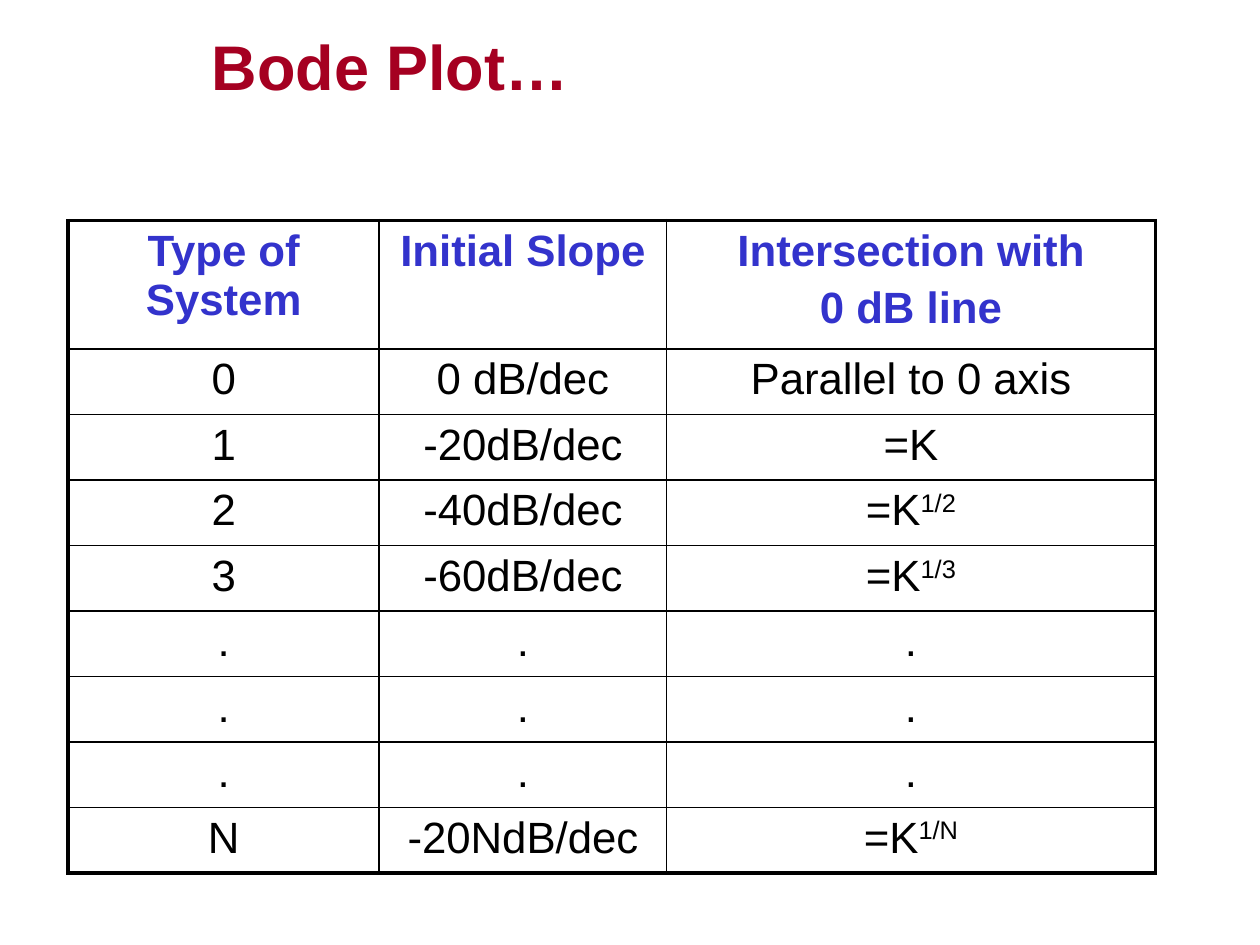
from lxml.etree import SubElement
from pptx import Presentation
from pptx.dml.color import RGBColor
from pptx.enum.text import MSO_ANCHOR as Anchor, PP_ALIGN as Align
from pptx.oxml.ns import qn
from pptx.util import Inches, Pt

FONT = "Arial"
RED, BLUE, BLACK = "A50021", "3333CC", "000000"
THIN, THICK = 1, 2.25

# Each cell is a list of paragraphs; "^" starts a superscript
HEADER = [["Type of System"], ["Initial Slope"], ["Intersection with", "0 dB line"]]
SYSTEMS = [
    ("0", "0 dB/dec", "Parallel to 0 axis"),
    ("1", "-20dB/dec", "=K"),
    ("2", "-40dB/dec", "=K^1/2"),
    ("3", "-60dB/dec", "=K^1/3"),
    *[(".", ".", ".")] * 3,
    ("N", "-20NdB/dec", "=K^1/N"),
]
COLUMN_WIDTHS = [2.47, 2.28, 3.88]
ROW_HEIGHTS = [1.02] + [0.52] * len(SYSTEMS)


def color(value):
    return RGBColor.from_string(value)


class SlideBuilder:
    def __init__(self, deck):
        self.page = deck.slides.add_slide(deck.slide_layouts[5])

    def format_span(self, span, size, ink, bold):
        values = {"name": FONT, "size": Pt(size), "bold": bold}
        for name, value in values.items():
            setattr(span.font, name, value)
        span.font.color.rgb = color(ink)

    def title(self, text, left, top, width, height):
        box = self.page.shapes.title
        place = {"left": left, "top": top, "width": width, "height": height}
        for name, value in place.items():
            setattr(box, name, Inches(value))
        frame = box.text_frame
        frame.vertical_anchor = Anchor.MIDDLE
        para = frame.paragraphs[0]
        para.alignment = Align.LEFT
        span = para.add_run()
        span.text = text
        self.format_span(span, 36, RED, True)

    def borders(self, cell, widths):
        props = cell._tc.get_or_add_tcPr()
        for side, width in widths.items():
            line = SubElement(props, qn(f"a:ln{side}"), w=str(Pt(width)))
            fill = SubElement(line, qn("a:solidFill"))
            SubElement(fill, qn("a:srgbClr"), val=BLACK)

    def cell_text(self, cell, lines, ink, bold):
        frame = cell.text_frame
        for index, line in enumerate(lines):
            para = frame.add_paragraph() if index else frame.paragraphs[0]
            para.alignment = Align.CENTER
            if index:
                para.space_before = Pt(5)
            for level, part in enumerate(line.split("^")):
                span = para.add_run()
                span.text = part
                self.format_span(span, 25, ink, bold)
                if level:
                    span._r.get_or_add_rPr().set("baseline", "30000")

    def table(self, rows, left, top):
        size = sum(COLUMN_WIDTHS), sum(ROW_HEIGHTS)
        last_row, last_column = len(rows) - 1, len(COLUMN_WIDTHS) - 1
        table = self.page.shapes.add_table(
            len(rows), len(COLUMN_WIDTHS), *map(Inches, (left, top, *size))).table
        table.first_row = table.horz_banding = False
        for column, width in zip(table.columns, COLUMN_WIDTHS):
            column.width = Inches(width)
        for row, height in zip(table.rows, ROW_HEIGHTS):
            row.height = Inches(height)

        for r, row in enumerate(rows):
            for c, lines in enumerate(row):
                cell = table.cell(r, c)
                # Thick outer frame, thin inner grid
                edges = {"L": c == 0, "R": c == last_column,
                         "T": r == 0, "B": r == last_row}
                self.borders(cell, {side: THICK if outer else THIN
                                    for side, outer in edges.items()})
                cell.fill.background()
                self.cell_text(cell, lines, BLACK if r else BLUE, r == 0)


def main():
    deck = Presentation()
    deck.slide_width, deck.slide_height = Inches(10), Inches(7.5)
    builder = SlideBuilder(deck)

    # Title
    builder.title("Bode Plot…", 1.58, 0.07, 8.26, 0.9)

    # Slope and intersection by system type
    rows = [HEADER] + [[[text] for text in system] for system in SYSTEMS]
    builder.table(rows, 0.54, 1.75)

    deck.save("out.pptx")


if __name__ == "__main__":
    main()
